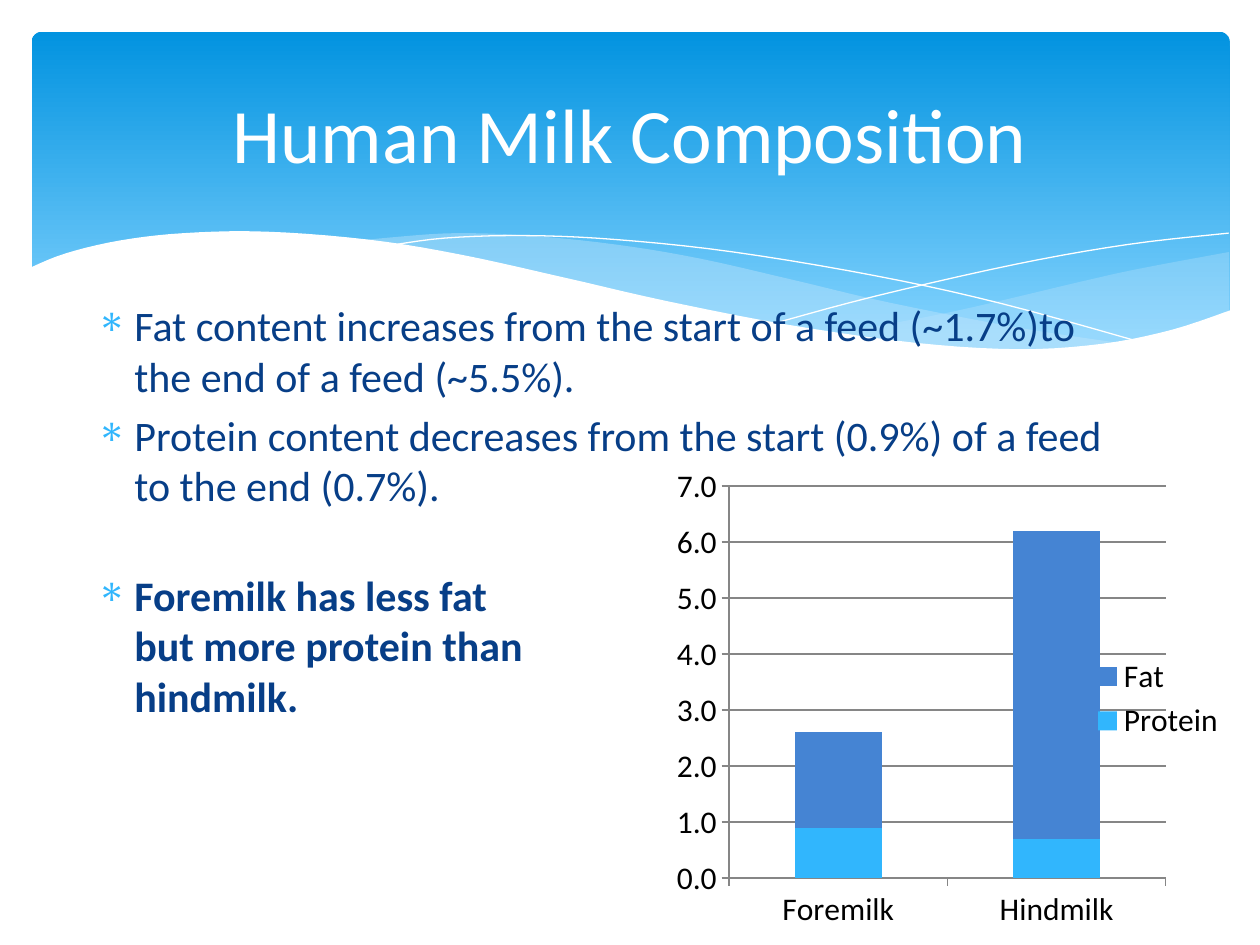
from lxml import etree
from pptx import Presentation
from pptx.chart.data import CategoryChartData
from pptx.dml.color import RGBColor
from pptx.enum.chart import XL_CHART_TYPE, XL_LEGEND_POSITION, XL_TICK_MARK
from pptx.enum.shapes import MSO_SHAPE
from pptx.enum.text import MSO_ANCHOR, PP_ALIGN
from pptx.oxml import parse_xml
from pptx.oxml.ns import nsdecls, qn
from pptx.util import Cm, Pt

STACKED = XL_CHART_TYPE.COLUMN_STACKED
LEGEND_RIGHT = XL_LEGEND_POSITION.RIGHT
TICK_OUT = XL_TICK_MARK.OUTSIDE
ROUNDED = MSO_SHAPE.ROUNDED_RECTANGLE
MIDDLE, TOP = MSO_ANCHOR.MIDDLE, MSO_ANCHOR.TOP
CENTER, LEFT = PP_ALIGN.CENTER, PP_ALIGN.LEFT

FONT = "Calibri"
WHITE, NAVY, SKY, BLUE, PALE = "FFFFFF", "073E87", "31B6FD", "4584D3", "C6E7FC"
GRID = "868686"
CURVE_STEPS = 5

# Key points of the wave curves, in centimetres
RIGHT_TOP = [(24.78, 5.08), (23.01, 5.41), (21.87, 5.66), (19.13, 6.3), (16.79, 6.73)]
RIGHT_BOTTOM = [(16.79, 6.73), (18.26, 6.91), (19.53, 7.04), (20.68, 7.06),
                (22.15, 6.96), (23.57, 6.68), (24.78, 6.27)]
MIDDLE_TOP = [(22.68, 6.93), (20.5, 6.6), (17.93, 6.1), (15.98, 5.64), (14.1, 5.21),
              (12.42, 4.93), (10.67, 4.75), (9.17, 4.7), (7.95, 4.78), (7.26, 4.85)]
MIDDLE_BOTTOM = [(7.26, 4.85), (9.19, 5.16), (11.4, 5.64), (14.38, 6.3),
                 (16.89, 6.76), (19, 7.01), (20.78, 7.06), (22.68, 6.93)]
FALLING_LINE = [(7.85, 4.95), (8.97, 4.8), (10.57, 4.75), (12.42, 4.83),
                (14.78, 5.08), (17.65, 5.56), (20.19, 6.12), (23.04, 6.91)]
RISING_LINE = [(15.57, 6.53), (17.65, 5.97), (20.47, 5.33), (22.73, 4.93), (24.77, 4.7)]
WHITE_EDGE = [(24.82, 6.25), (23.62, 6.65), (22.23, 6.93), (20.55, 7.04), (18.44, 6.91),
              (15.9, 6.55), (13.44, 6.07), (11.35, 5.59), (9.27, 5.13), (7.42, 4.83),
              (5.36, 4.67), (3.71, 4.7), (2.41, 4.85), (1.32, 5.11), (0.58, 5.41)]
WHITE_BASE = [(0.58, 8.36), (24.82, 8.36)]


def color(code):
    return RGBColor.from_string(code)


def smooth(points):
    """Catmull-Rom curve through the points, as a list of short steps."""
    padded = [points[0], *points, points[-1]]
    curve = [points[0]]
    for a, b, c, d in zip(padded, padded[1:], padded[2:], padded[3:]):
        for step in range(1, CURVE_STEPS + 1):
            t = step / CURVE_STEPS
            curve.append(tuple(
                q + t * (r - p) / 2 + t * t * (2 * p - 5 * q + 4 * r - s) / 2
                + t ** 3 * (3 * q - p - 3 * r + s) / 2
                for p, q, r, s in zip(a, b, c, d)))
    return curve


def add_wave(page, points, fill=None, opacity=100, line=None):
    """Closed area when a fill is given, otherwise an open line."""
    start, *rest = [(Cm(x), Cm(y)) for x, y in points]
    builder = page.shapes.build_freeform(*start)
    builder.add_line_segments(rest, close=fill is not None)
    wave = builder.convert_to_shape()
    wave.shadow.inherit = False
    if fill:
        wave.fill.solid()
        wave.fill.fore_color.rgb = color(fill)
        tint = wave.fill._xPr.find(".//" + qn("a:srgbClr"))
        etree.SubElement(tint, qn("a:alpha"), val=str(opacity * 1000))
    else:
        wave.fill.background()
    if line:
        wave.line.color.rgb = color(line)
        wave.line.width = Pt(0)
    else:
        wave.line.fill.background()


def add_banner(page):
    banner = page.shapes.add_shape(ROUNDED, Cm(0.64), Cm(0.64), Cm(24.15), Cm(6.86))
    banner.adjustments[0] = 0.03
    banner.shadow.inherit = False
    banner.line.fill.background()
    banner.fill.gradient()
    banner.fill.gradient_angle = 270
    for stop, position, code in zip(banner.fill.gradient_stops, (0, 0.9), ("0293E0", "83D3FE")):
        stop.position = position
        stop.color.rgb = color(code)


def add_box(page, left, top, width, height, anchor=TOP):
    frame = page.shapes.add_textbox(Cm(left), Cm(top), Cm(width), Cm(height)).text_frame
    frame.word_wrap = True
    frame.vertical_anchor = anchor
    return frame


def add_text(para, text, size=24, code=NAVY, bold=False, align=LEFT, before=0):
    para.alignment = align
    para.space_before = Pt(before)
    span = para.add_run()
    span.text = text
    span.font.name = FONT
    span.font.size = Pt(size)
    span.font.bold = bold
    span.font.color.rgb = color(code)


def indent(para, bullet):
    properties = para._p.get_or_add_pPr()
    margin = Cm(0.76)
    properties.set("marL", str(margin))
    properties.set("indent", str(-margin if bullet else 0))
    if bullet:
        tint = etree.SubElement(properties, qn("a:buClr"))
        etree.SubElement(tint, qn("a:srgbClr"), val=SKY)
        etree.SubElement(properties, qn("a:buFont"), typeface="Symbol")
        etree.SubElement(properties, qn("a:buChar"), char="∗")


def add_points(page):
    frame = add_box(page, 1.7, 5.92, 21.31, 11.1)
    points = [
        ("Fat content increases from the start of a feed (~1.7%)to the end of a feed (~5.5%).",
         True, False, 4.8),
        ("Protein content decreases from the start (0.9%) of a feed to the end (0.7%).",
         True, False, 4.8),
        ("Foremilk has less fat", True, True, 34),
        ("but more protein than", False, True, 0),
        ("hindmilk.", False, True, 0),
    ]
    for number, (text, bullet, bold, before) in enumerate(points):
        para = frame.add_paragraph() if number else frame.paragraphs[0]
        add_text(para, text, bold=bold, before=before)
        indent(para, bullet)


def set_plot_area(chart, **fractions):
    """Fix the inner plot area as fractions (x, y, w, h) of the chart."""
    plot_area = chart._chartSpace.chart.plotArea
    for old in plot_area.findall(qn("c:layout")):
        plot_area.remove(old)
    places = "".join(f'<c:{key} val="{value}"/>' for key, value in fractions.items())
    plot_area.insert(0, parse_xml(
        f'<c:layout {nsdecls("c")}><c:manualLayout><c:layoutTarget val="inner"/>'
        f'<c:xMode val="edge"/><c:yMode val="edge"/>{places}</c:manualLayout></c:layout>'))


def add_milk_chart(page):
    data = CategoryChartData(number_format="0.0")
    data.categories = ["Foremilk", "Hindmilk"]
    data.add_series("Protein", (0.9, 0.7))
    data.add_series("Fat", (1.7, 5.5))
    chart = page.shapes.add_chart(
        STACKED, Cm(11.63), Cm(9.32), Cm(13.34), Cm(9.53), data).chart
    chart.has_title = False
    chart.font.name = FONT
    chart.font.size = Pt(18)
    chart.font.color.rgb = color("000000")
    chart.has_legend = True
    chart.legend.position = LEGEND_RIGHT
    chart.legend.include_in_layout = False
    plot = chart.plots[0]
    plot.vary_by_categories = False
    plot.gap_width, plot.overlap = 150, 100
    for series, code in zip(plot.series, (SKY, BLUE)):
        series.format.fill.solid()
        series.format.fill.fore_color.rgb = color(code)
    values = chart.value_axis
    values.minimum_scale, values.maximum_scale, values.major_unit = 0, 7, 1
    values.tick_labels.number_format = "0.0"
    values.tick_labels.number_format_is_linked = False
    values.has_major_gridlines = True
    values.major_gridlines.format.line.color.rgb = color(GRID)
    for axis in (chart.category_axis, values):
        axis.major_tick_mark = TICK_OUT
        axis.format.line.color.rgb = color(GRID)
    set_plot_area(chart, x=0.23, y=0.05, w=0.66, h=0.83)


def main():
    deck = Presentation()
    deck.slide_width, deck.slide_height = Cm(25.4), Cm(19.05)
    page = deck.slides.add_slide(deck.slide_layouts[6])
    add_banner(page)
    add_wave(page, smooth(RIGHT_TOP) + smooth(RIGHT_BOTTOM), fill=PALE, opacity=29)
    add_wave(page, smooth(MIDDLE_TOP) + smooth(MIDDLE_BOTTOM), fill=PALE, opacity=40)
    for points in (FALLING_LINE, RISING_LINE):
        add_wave(page, smooth(points), line=WHITE)
    add_wave(page, smooth(WHITE_EDGE) + WHITE_BASE, fill=WHITE)
    add_points(page)
    title = add_box(page, 1.27, 0.94, 22.86, 3.48, anchor=MIDDLE)
    add_text(title.paragraphs[0], "Human Milk Composition", size=44, code=WHITE, align=CENTER)
    add_milk_chart(page)
    deck.save("out.pptx")


if __name__ == "__main__":
    main()
